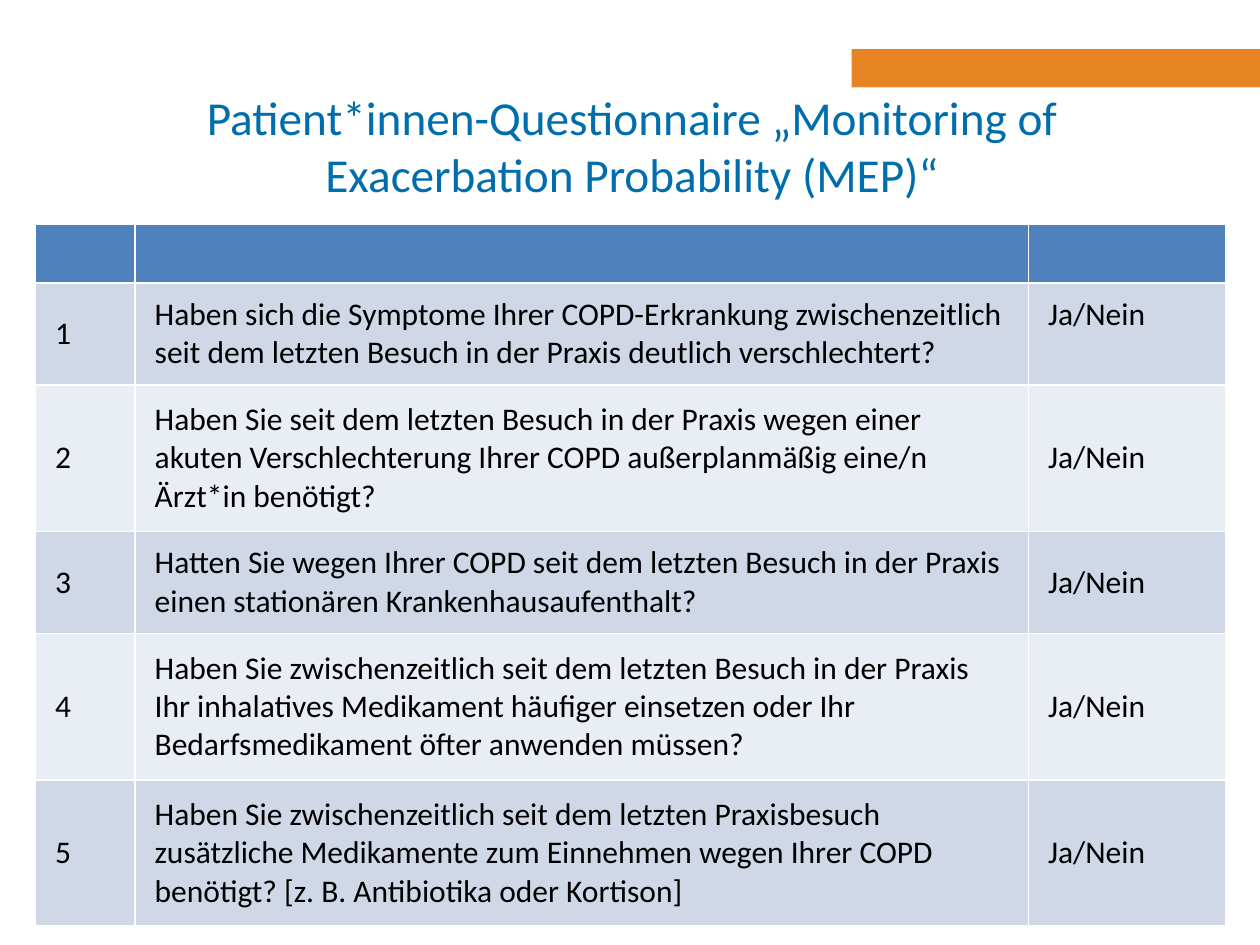
from lxml.etree import SubElement
from pptx import Presentation
from pptx.dml.color import RGBColor
from pptx.enum.shapes import MSO_SHAPE
from pptx.enum.text import MSO_ANCHOR as Anchor, PP_ALIGN as Align
from pptx.oxml.ns import qn
from pptx.util import Cm, Pt

COLORS = {
    "accent": "E68323",
    "veil": "FFFFFF",
    "title": "006EAC",
    "header": "4F81BD",
    "odd": "D0D8E8",
    "even": "E9EDF4",
    "text": "000000",
}
FONT = "Calibri"
TITLE = "Patient*innen-Questionnaire „Monitoring of Exacerbation Probability (MEP)“"
ANSWER = "Ja/Nein"
QUESTIONS = [
    "Haben sich die Symptome Ihrer COPD-Erkrankung zwischenzeitlich seit dem letzten Besuch in der Praxis deutlich verschlechtert?",
    "Haben Sie seit dem letzten Besuch in der Praxis wegen einer akuten Verschlechterung Ihrer COPD außerplanmäßig eine/n Ärzt*in benötigt?",
    "Hatten Sie wegen Ihrer COPD seit dem letzten Besuch in der Praxis einen stationären Krankenhausaufenthalt?",
    "Haben Sie zwischenzeitlich seit dem letzten Besuch in der Praxis Ihr inhalatives Medikament häufiger einsetzen oder Ihr Bedarfsmedikament öfter anwenden müssen?",
    "Haben Sie zwischenzeitlich seit dem letzten Praxisbesuch zusätzliche Medikamente zum Einnehmen wegen Ihrer COPD benötigt? [z. B. Antibiotika oder Kortison]",
]
COLUMN_WIDTHS = [2.01, 18.01, 3.99]
HEADER_HEIGHT = 1.18
QUESTION_HEIGHTS = [2.06, 2.95, 2.06, 2.95, 2.95]


def paint(target, color):
    target.fill.solid()
    target.fill.fore_color.rgb = RGBColor.from_string(COLORS[color])


def style_text(para, size, color):
    for span in para.runs:
        span.font.name = FONT
        span.font.size = Pt(size)
        span.font.color.rgb = RGBColor.from_string(COLORS[color])


def add_bar(page, left, top, width, height, color):
    bar = page.shapes.add_shape(
        MSO_SHAPE.RECTANGLE, Cm(left), Cm(top), Cm(width), Cm(height))
    paint(bar, color)
    bar.line.fill.background()
    bar.shadow.inherit = False
    return bar


def add_heading(page, left, top, width, height):
    add_bar(page, left + 17.17, top, width - 17.17, 0.78, "accent")
    title_top, title_height = top + 0.76, height - 0.76
    veil = add_bar(page, left, title_top, width, title_height, "veil")
    shade = veil.fill._xPr.find(qn("a:solidFill"))[0]
    SubElement(shade, qn("a:alpha")).set("val", "55000")

    box = page.shapes.add_textbox(
        Cm(left + 3.76), Cm(title_top), Cm(17.96), Cm(title_height))
    frame = box.text_frame
    frame.word_wrap = True
    frame.vertical_anchor = Anchor.MIDDLE
    frame.text = TITLE
    para = frame.paragraphs[0]
    para.alignment = Align.CENTER
    style_text(para, 27, "title")


def fill_cell(cell, text):
    cell.text = text
    cell.vertical_anchor = Anchor.MIDDLE
    cell.margin_left = cell.margin_right = Cm(0.4)
    style_text(cell.text_frame.paragraphs[0], 18, "text")


def add_questionnaire(page, left, top):
    heights = [HEADER_HEIGHT] + QUESTION_HEIGHTS
    table = page.shapes.add_table(
        len(heights), len(COLUMN_WIDTHS), Cm(left), Cm(top),
        Cm(sum(COLUMN_WIDTHS)), Cm(sum(heights))).table
    for column, width in zip(table.columns, COLUMN_WIDTHS):
        column.width = Cm(width)
    for row, height in zip(table.rows, heights):
        row.height = Cm(height)
    for cell in table.rows[0].cells:
        paint(cell, "header")
    for number, question in enumerate(QUESTIONS, 1):
        for cell, text in zip(table.rows[number].cells,
                              (str(number), question, ANSWER)):
            paint(cell, "odd" if number % 2 else "even")
            fill_cell(cell, text)
    first_answer = table.cell(1, 2)
    first_answer.vertical_anchor = Anchor.TOP
    first_answer.margin_top = Cm(0.25)


def main():
    deck = Presentation()
    deck.slide_width, deck.slide_height = Cm(25.4), Cm(19.05)
    page = deck.slides.add_slide(deck.slide_layouts[6])
    add_heading(page, 0, 0.99, 25.4, 3.12)
    add_questionnaire(page, 0.71, 4.52)
    deck.save("out.pptx")


if __name__ == "__main__":
    main()
